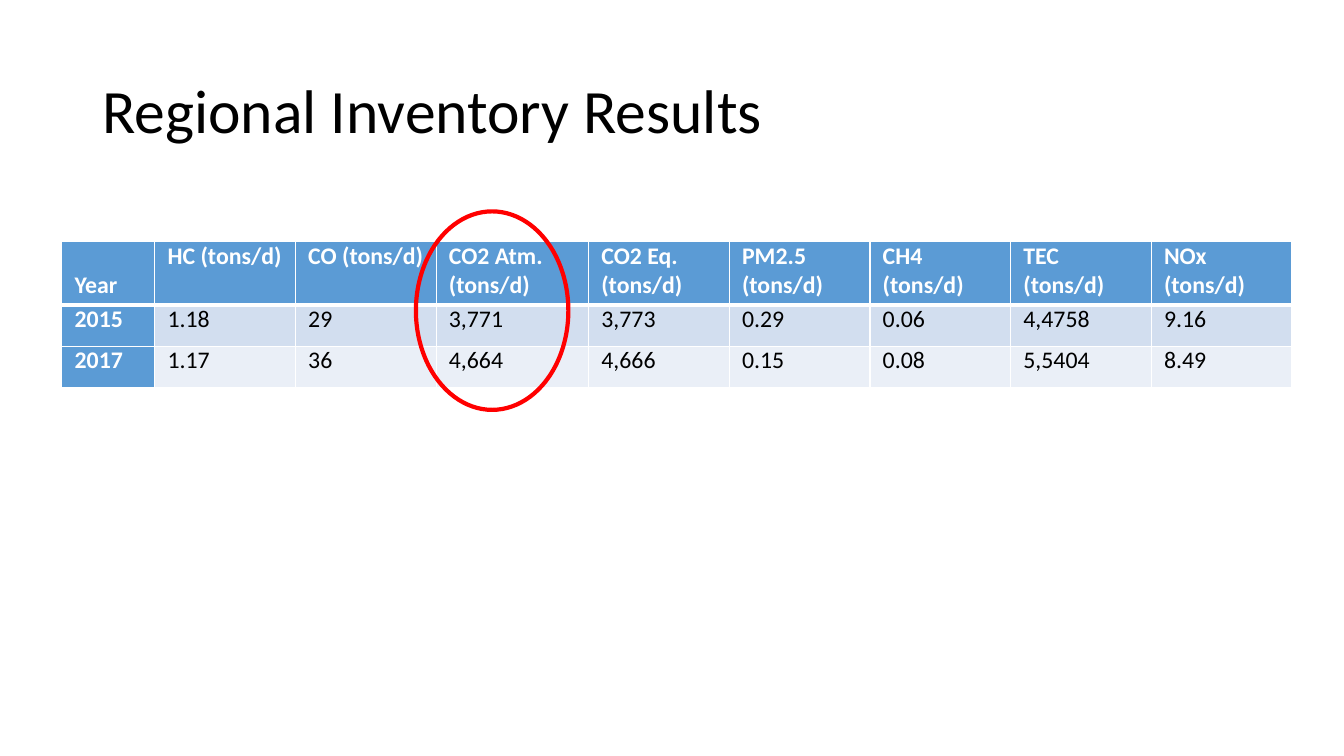
from dataclasses import dataclass

from lxml import etree
from pptx import Presentation
from pptx.dml.color import RGBColor
from pptx.enum.shapes import MSO_SHAPE
from pptx.enum.text import MSO_ANCHOR, MSO_AUTO_SIZE, PP_ALIGN
from pptx.oxml.ns import qn
from pptx.util import Pt

OVAL = MSO_SHAPE.OVAL
TOP, MIDDLE, BOTTOM = MSO_ANCHOR.TOP, MSO_ANCHOR.MIDDLE, MSO_ANCHOR.BOTTOM
LEFT = PP_ALIGN.LEFT
NO_AUTOFIT = MSO_AUTO_SIZE.NONE
TITLE_ONLY = 5


@dataclass(frozen=True)
class Theme:
    font: str = "Calibri"
    title_size: float = 44
    table_size: float = 17
    ink: str = "000000"
    paper: str = "FFFFFF"
    header: str = "5B9BD5"
    bands: tuple = ("D2DEEF", "EAEFF7")
    highlight: str = "FF0000"
    rule: float = 1
    header_rule: float = 3
    highlight_line: float = 3


THEME = Theme()

POLLUTANTS = ["HC", "CO", "CO2 Atm.", "CO2 Eq.", "PM2.5", "CH4", "TEC", "NOx"]
INVENTORY = [
    ["2015", "1.18", "29", "3,771", "3,773", "0.29", "0.06", "4,4758", "9.16"],
    ["2017", "1.17", "36", "4,664", "4,666", "0.15", "0.08", "5,5404", "8.49"],
]
HIGHLIGHTED = 3
YEAR_WIDTH, POLLUTANT_WIDTH, HIGHLIGHTED_WIDTH = 66.4, 100.5, 108.9
HEADER_HEIGHT, ROW_HEIGHT = 45.4, 29.3
CELL_INSET = 9.1


def style_font(paragraph, size, color, bold=False):
    font = paragraph.font
    font.name, font.size, font.bold = THEME.font, Pt(size), bold
    font.color.rgb = RGBColor.from_string(color)


def add_title(slide, left, top, width, height):
    title = slide.shapes.title
    title.left, title.top, title.width, title.height = map(Pt, (left, top, width, height))
    frame = title.text_frame
    frame.text = "Regional Inventory Results"
    frame.auto_size = NO_AUTOFIT
    frame.vertical_anchor = MIDDLE
    heading = frame.paragraphs[0]
    heading.alignment = LEFT
    heading.line_spacing = 0.9
    style_font(heading, THEME.title_size, THEME.ink)


def set_borders(cell, top, bottom):
    properties = cell._tc.get_or_add_tcPr()
    sides = {"lnL": THEME.rule, "lnR": THEME.rule, "lnT": top, "lnB": bottom}
    for position, (side, weight) in enumerate(sides.items()):
        line = etree.Element(qn(f"a:{side}"), w=str(Pt(weight)))
        fill = etree.SubElement(line, qn("a:solidFill"))
        etree.SubElement(fill, qn("a:srgbClr"), val=THEME.paper)
        properties.insert(position, line)


def fill_cell(cell, text, row, column):
    is_header = row == 0
    is_label = is_header or column == 0
    is_corner = is_header and column == 0
    cell.text = text
    cell.margin_left = cell.margin_right = Pt(CELL_INSET)
    cell.margin_top = 0
    # The corner label shares the second line of the other headings
    cell.margin_bottom = Pt(3.9 if is_corner else 0)
    cell.vertical_anchor = BOTTOM if is_corner else TOP
    color = THEME.header if is_label else THEME.bands[(row - 1) % 2]
    cell.fill.solid()
    cell.fill.fore_color.rgb = RGBColor.from_string(color)
    style_font(cell.text_frame.paragraphs[0], THEME.table_size,
               THEME.paper if is_label else THEME.ink, is_label)
    set_borders(cell,
                top=THEME.header_rule if row == 1 else THEME.rule,
                bottom=THEME.header_rule if is_header else THEME.rule)


def add_inventory(slide, left, top):
    rows = [["Year"] + [f"{name} (tons/d)" for name in POLLUTANTS]] + INVENTORY
    widths = [YEAR_WIDTH] + [POLLUTANT_WIDTH] * len(POLLUTANTS)
    widths[HIGHLIGHTED] = HIGHLIGHTED_WIDTH
    heights = [HEADER_HEIGHT] + [ROW_HEIGHT] * len(INVENTORY)

    # Table of results
    inventory = slide.shapes.add_table(
        len(rows), len(widths), Pt(left), Pt(top), Pt(sum(widths)), Pt(sum(heights))).table
    inventory.first_col = True
    for column, width in zip(inventory.columns, widths):
        column.width = Pt(width)
    for row, height in zip(inventory.rows, heights):
        row.height = Pt(height)
    for r, values in enumerate(rows):
        for c, value in enumerate(values):
            fill_cell(inventory.cell(r, c), value, r, c)

    # Ring around the atmospheric CO2 column
    ring_left = left + sum(widths[:HIGHLIGHTED]) - 14.5
    ring = slide.shapes.add_shape(
        OVAL, Pt(ring_left), Pt(top - 21.6), Pt(HIGHLIGHTED_WIDTH), Pt(sum(heights) + 37.8))
    ring.shadow.inherit = False
    ring.fill.background()
    ring.line.color.rgb = RGBColor.from_string(THEME.highlight)
    ring.line.width = Pt(THEME.highlight_line)


def main():
    deck = Presentation()
    deck.slide_width, deck.slide_height = Pt(960), Pt(540)
    slide = deck.slides.add_slide(deck.slide_layouts[TITLE_ONLY])
    add_title(slide, 66, 28.8, 828, 104.4)
    add_inventory(slide, 44.2, 172.6)
    deck.save("out.pptx")


if __name__ == "__main__":
    main()
